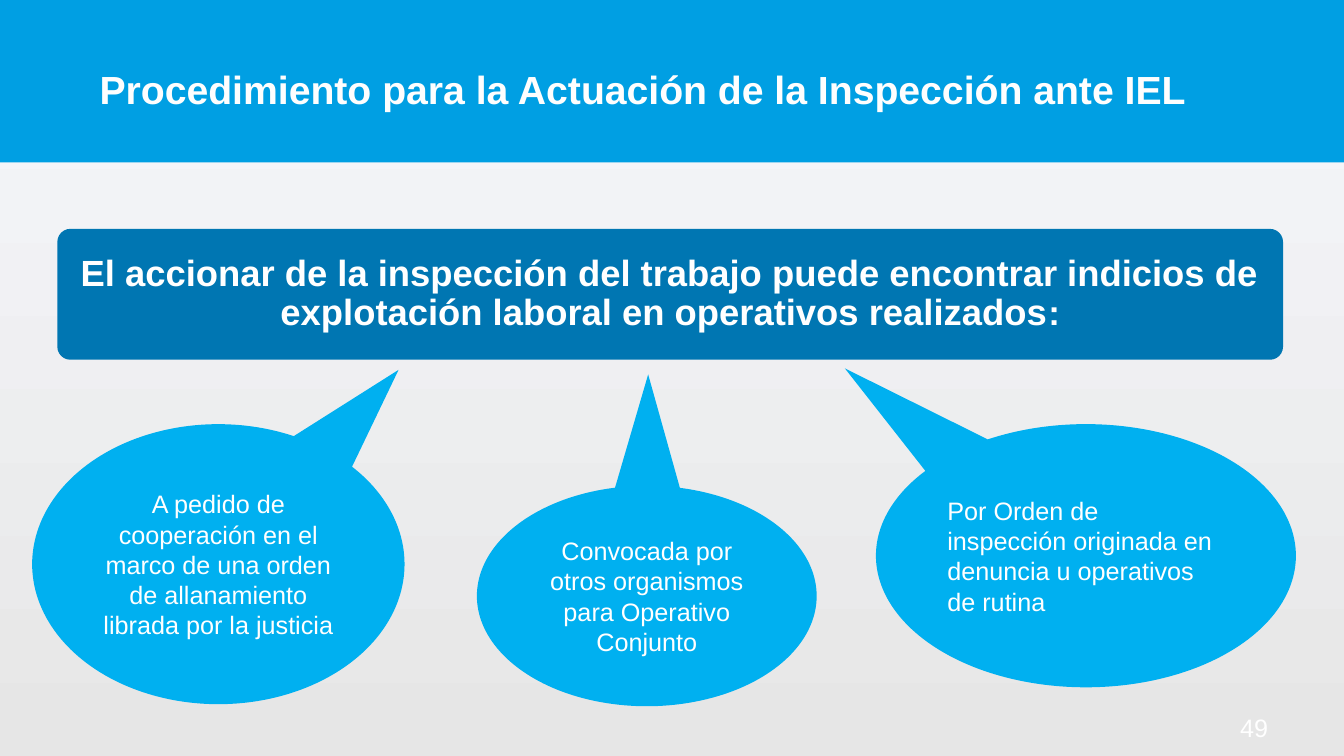
from dataclasses import dataclass

from pptx import Presentation
from pptx.dml.color import RGBColor
from pptx.enum.shapes import MSO_SHAPE
from pptx.enum.text import MSO_ANCHOR, PP_ALIGN
from pptx.util import Pt


@dataclass(frozen=True)
class Theme:
    """Colours, font and type sizes of the slide."""
    font: str = "Arial"
    band: str = "009FE3"
    panel: str = "0076B2"
    bubble: str = "00B0F0"
    title_text: str = "FEFEFE"
    text: str = "FFFFFF"
    back_top: str = "F6F7FB"
    back_bottom: str = "E6E6E6"
    title_size: int = 28
    panel_size: int = 26
    colon_size: int = 25
    body_size: int = 18


class SlideBuilder:
    """Draws styled elements on one slide, with boxes given in points."""

    def __init__(self, slide, theme):
        """Keep the slide and its theme."""
        self.s = slide
        self.theme = theme

    def background(self):
        """Fill the background with a vertical gradient."""
        fill = self.s.background.fill
        fill.gradient()
        fill.gradient_angle = 270
        stops = ((0.03, self.theme.back_top), (1, self.theme.back_bottom))
        for stop, (position, color) in zip(fill.gradient_stops, stops):
            stop.position = position
            stop.color.rgb = RGBColor.from_string(color)

    def shape(self, kind, box, color, adjustments=()):
        """Add a flat preset shape without outline."""
        sp = self.s.shapes.add_shape(kind, *map(Pt, box))
        sp.shadow.inherit = False
        sp.fill.solid()
        sp.fill.fore_color.rgb = RGBColor.from_string(color)
        sp.line.fill.background()
        for i, value in enumerate(adjustments):
            sp.adjustments[i] = value
        return sp

    def set_text(self, sp, text, size, align=PP_ALIGN.LEFT, bold=False, color=None):
        """Put one vertically centred paragraph into a shape."""
        tf = sp.text_frame
        tf.word_wrap = True
        tf.vertical_anchor = MSO_ANCHOR.MIDDLE
        tf.text = text
        p = tf.paragraphs[0]
        p.alignment = align
        self.style(p.runs[0], size, bold, color)
        return p

    def style(self, r, size, bold=False, color=None):
        """Format one run."""
        r.font.name = self.theme.font
        r.font.size = Pt(size)
        r.font.bold = bold
        r.font.color.rgb = RGBColor.from_string(color or self.theme.text)

    def label(self, box, text, size, **style):
        """Add a text box."""
        sp = self.s.shapes.add_textbox(*map(Pt, box))
        self.set_text(sp, text, size, **style)

    def panel(self, box, text, ending):
        """Add the rounded statement panel with a smaller ending."""
        sp = self.shape(MSO_SHAPE.ROUNDED_RECTANGLE, box, self.theme.panel, [0.1])
        p = self.set_text(sp, text, self.theme.panel_size, PP_ALIGN.CENTER, True)
        p.line_spacing = 0.9
        r = p.add_run()
        r.text = ending
        self.style(r, self.theme.colon_size, True)
        tf = sp.text_frame
        tf.margin_left = tf.margin_right = Pt(10)

    def bubble(self, box, tip, text, align):
        """Add an elliptical callout whose tip is relative to its centre."""
        sp = self.shape(MSO_SHAPE.OVAL_CALLOUT, box, self.theme.bubble, tip)
        self.set_text(sp, text, self.theme.body_size, align)


def main():
    """Build and save the slide."""
    prs = Presentation()
    prs.slide_width, prs.slide_height = Pt(960), Pt(540)
    theme = Theme()
    slide = SlideBuilder(prs.slides.add_slide(prs.slide_layouts[6]), theme)

    slide.background()
    slide.shape(MSO_SHAPE.RECTANGLE, (0, 0, 960, 116), theme.band)
    slide.label((64, 30.5, 832, 65.5),
                "Procedimiento para la Actuación de la Inspección ante IEL",
                theme.title_size, bold=True, color=theme.title_text)
    slide.panel((41, 163.5, 875.5, 93.5),
                "El accionar de la inspección del trabajo puede encontrar indicios de "
                "explotación laboral en operativos realizados", ":")

    bubbles = (
        ((23, 303, 266, 200), (0.484, -0.694),
         "A pedido de cooperación en el marco de una orden de allanamiento "
         "librada por la justicia", PP_ALIGN.CENTER),
        ((625.7, 303, 300, 188), (-0.574, -0.712),
         "Por Orden de inspección originada en denuncia u operativos de rutina",
         PP_ALIGN.LEFT),
        ((340.7, 347, 242.7, 157.5), (0.004, -1.005),
         "Convocada por otros organismos para Operativo Conjunto", PP_ALIGN.CENTER),
    )
    for bubble in bubbles:
        slide.bubble(*bubble)

    slide.label((833, 504, 80, 31), "49", theme.body_size, align=PP_ALIGN.RIGHT)
    prs.save("out.pptx")


if __name__ == "__main__":
    main()
